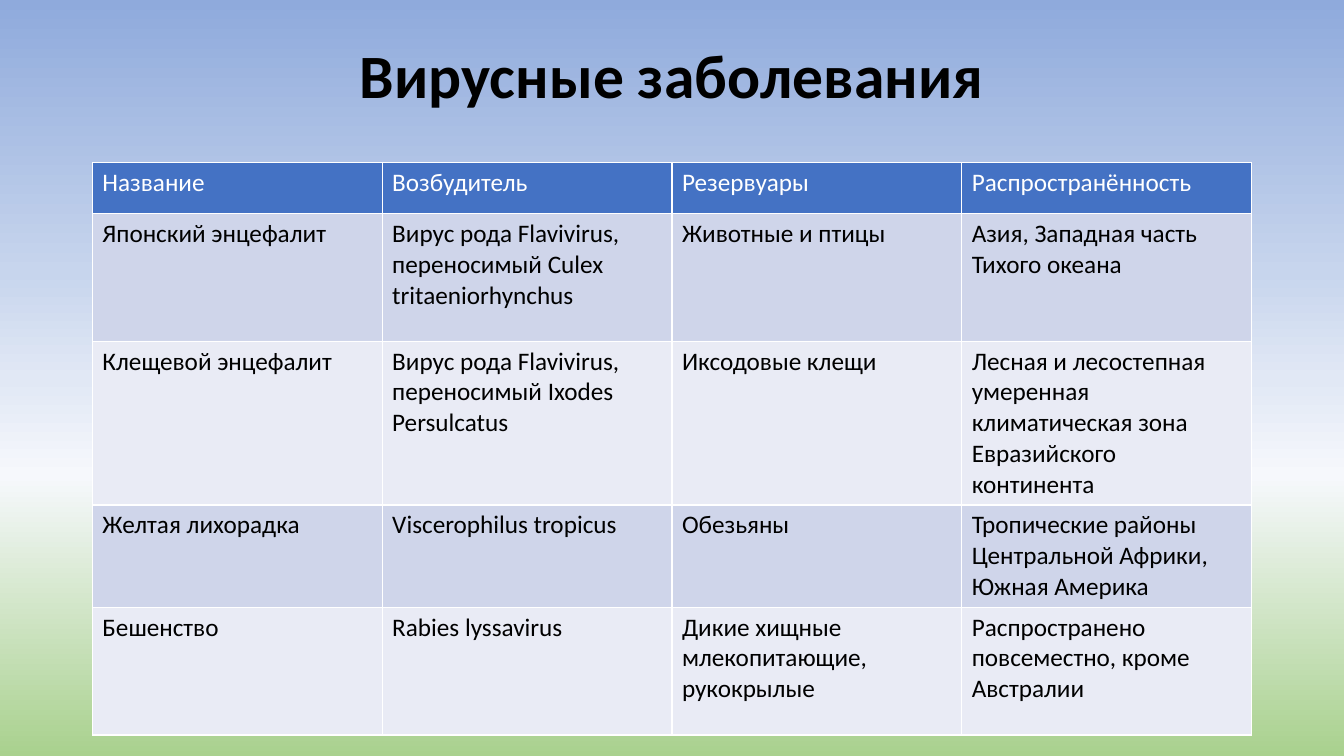
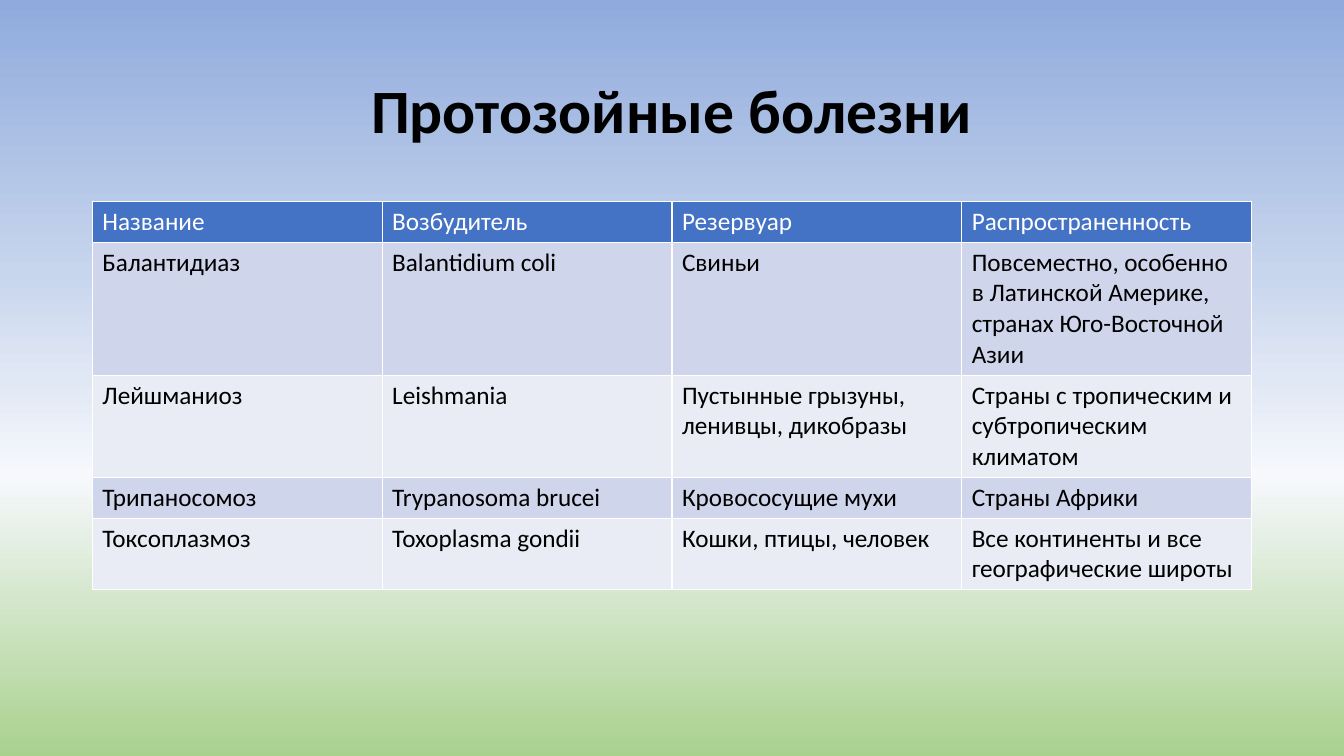
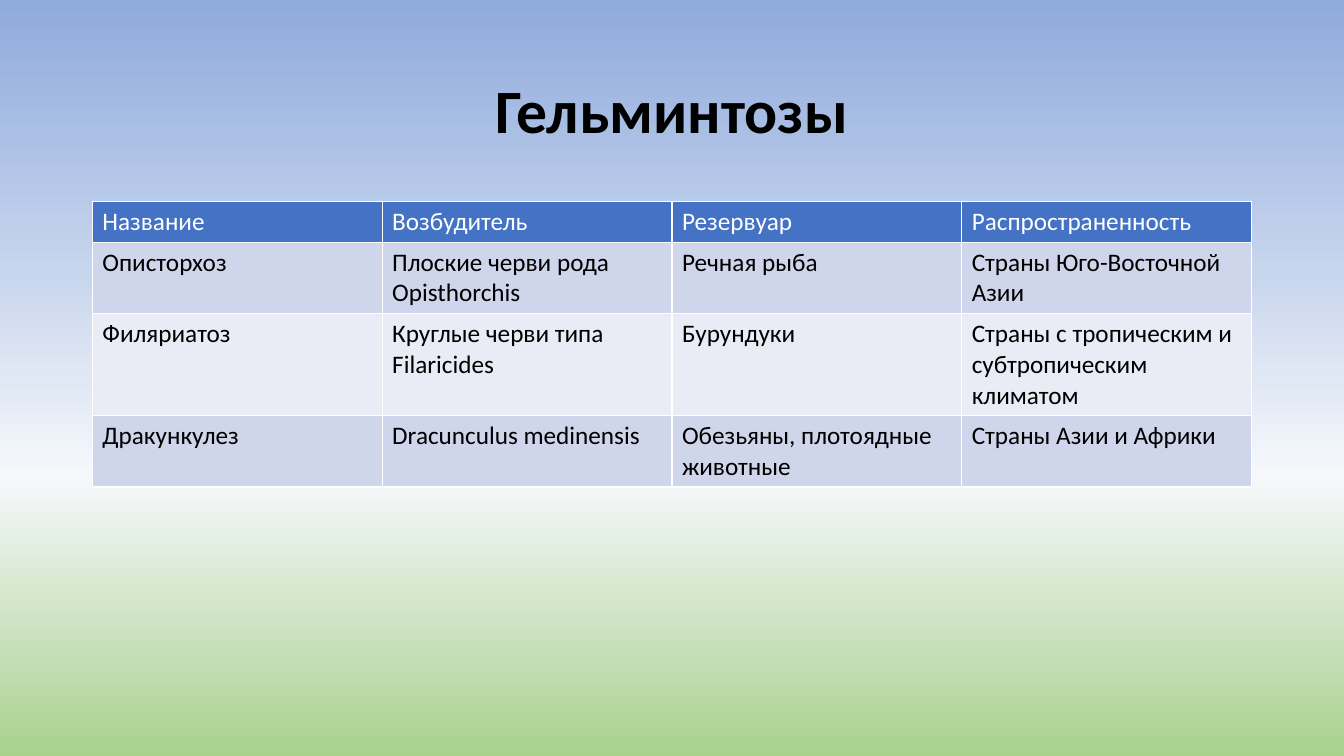
from lxml.etree import SubElement
from pptx import Presentation
from pptx.dml.color import RGBColor
from pptx.enum.text import MSO_ANCHOR, PP_ALIGN
from pptx.oxml import parse_xml
from pptx.oxml.ns import nsdecls, qn
from pptx.util import Pt

FONT = "Calibri"
BLACK, WHITE = "000000", "FFFFFF"
HEADER_FILL = "4472C4"
BAND_FILLS = ("CFD5EA", "E9EBF5")
SKY_TO_GRASS = ((0, "8FAADC"), (36, "C7D5ED"), (50, "E1E8F5"),
                (63, "F6F8FC"), (100, "A9D18E"))
LEFT, WIDTH = 66, 828

VIRAL = (
    ("Название", "Возбудитель", "Резервуары", "Распространённость"),
    ("Японский энцефалит",
     "Вирус рода Flavivirus, переносимый Culex tritaeniorhynchus",
     "Животные и птицы", "Азия, Западная часть Тихого океана"),
    ("Клещевой энцефалит",
     "Вирус рода Flavivirus, переносимый Ixodes Persulcatus",
     "Иксодовые клещи",
     "Лесная и лесостепная умеренная климатическая зона Евразийского континента"),
    ("Желтая лихорадка", "Viscerophilus tropicus", "Обезьяны",
     "Тропические районы Центральной Африки, Южная Америка"),
    ("Бешенство", "Rabies lyssavirus",
     "Дикие хищные млекопитающие, рукокрылые",
     "Распространено повсеместно, кроме Австралии"),
)
HEADINGS = ("Название", "Возбудитель", "Резервуар", "Распространенность")
PROTOZOAN = (
    HEADINGS,
    ("Балантидиаз", "Balantidium coli", "Свиньи",
     "Повсеместно, особенно в Латинской Америке, странах Юго-Восточной Азии"),
    ("Лейшманиоз", "Leishmania", "Пустынные грызуны, ленивцы, дикобразы",
     "Страны с тропическим и субтропическим климатом"),
    ("Трипаносомоз", "Trypanosoma brucei", "Кровососущие мухи",
     "Страны Африки"),
    ("Токсоплазмоз", "Toxoplasma gondii", "Кошки, птицы, человек",
     "Все континенты и все географические широты"),
)
HELMINTHIC = (
    HEADINGS,
    ("Описторхоз", "Плоские черви рода Opisthorchis", "Речная рыба",
     "Страны Юго-Восточной Азии"),
    ("Филяриатоз", "Круглые черви типа Filaricides", "Бурундуки",
     "Страны с тропическим и субтропическим климатом"),
    ("Дракункулез", "Dracunculus medinensis",
     "Обезьяны, плотоядные животные", "Страны Азии и Африки"),
)


def rgb(color):
    return RGBColor.from_string(color)


def set_background(master):
    """Give every slide the same vertical gradient through the master."""
    fill = master.background.fill
    fill.gradient()
    fill.gradient_angle = 270
    stops = master.element.find(".//" + qn("a:gsLst"))
    stops.clear()
    for percent, color in SKY_TO_GRASS:
        stop = SubElement(stops, qn("a:gs"), pos=str(percent * 1000))
        SubElement(stop, qn("a:srgbClr"), val=color)


def add_run(p, text, size, color, bold=False):
    r = p.add_run()
    r.text = text
    r.font.name = FONT
    r.font.size = Pt(size)
    r.font.bold = bold
    r.font.color.rgb = rgb(color)


def add_title(s, text, top, height):
    sp = s.shapes.add_textbox(Pt(LEFT), Pt(top), Pt(WIDTH), Pt(height))
    tf = sp.text_frame
    tf.word_wrap = True
    tf.vertical_anchor = MSO_ANCHOR.MIDDLE
    p = tf.paragraphs[0]
    p.alignment = PP_ALIGN.CENTER
    p.line_spacing = 0.9
    add_run(p, text, 44, BLACK, bold=True)


def set_borders(cell):
    props = cell._tc.get_or_add_tcPr()
    for i, side in enumerate(("lnL", "lnR", "lnT", "lnB")):
        props.insert(i, parse_xml(
            f'<a:{side} {nsdecls("a")} w="{Pt(1)}"><a:solidFill>'
            f'<a:srgbClr val="{WHITE}"/></a:solidFill></a:{side}>'))


def fill_cell(cell, text, fill, color):
    cell.fill.solid()
    cell.fill.fore_color.rgb = rgb(fill)
    set_borders(cell)
    add_run(cell.text_frame.paragraphs[0], text, 18, color)


def add_disease_table(s, rows, top, heights):
    columns = len(rows[0])
    table = s.shapes.add_table(len(rows), columns, Pt(LEFT), Pt(top),
                               Pt(WIDTH), Pt(sum(heights))).table
    table.first_row = table.horz_banding = False
    for column in table.columns:
        column.width = Pt(WIDTH / columns)
    for i, (texts, height) in enumerate(zip(rows, heights)):
        table.rows[i].height = Pt(height)
        fill = BAND_FILLS[(i - 1) % 2] if i else HEADER_FILL
        for j, text in enumerate(texts):
            fill_cell(table.cell(i, j), text, fill, BLACK if i else WHITE)


def main():
    prs = Presentation()
    prs.slide_width, prs.slide_height = Pt(960), Pt(540)
    set_background(prs.slide_master)
    slides = (
        ("Вирусные заболевания", 17, 78, VIRAL, 116, (36.7, 91, 117, 73, 91.4)),
        ("Протозойные болезни", 28.75, 104.4, PROTOZOAN, 143.75,
         (29.2, 95, 73, 29.2, 51)),
        ("Гельминтозы", 28.75, 104.4, HELMINTHIC, 143.75, (29.2, 51, 73, 51)),
    )
    for title, title_top, title_height, rows, table_top, heights in slides:
        s = prs.slides.add_slide(prs.slide_layouts[6])
        add_title(s, title, title_top, title_height)
        add_disease_table(s, rows, table_top, heights)
    prs.save("out.pptx")


if __name__ == "__main__":
    main()
